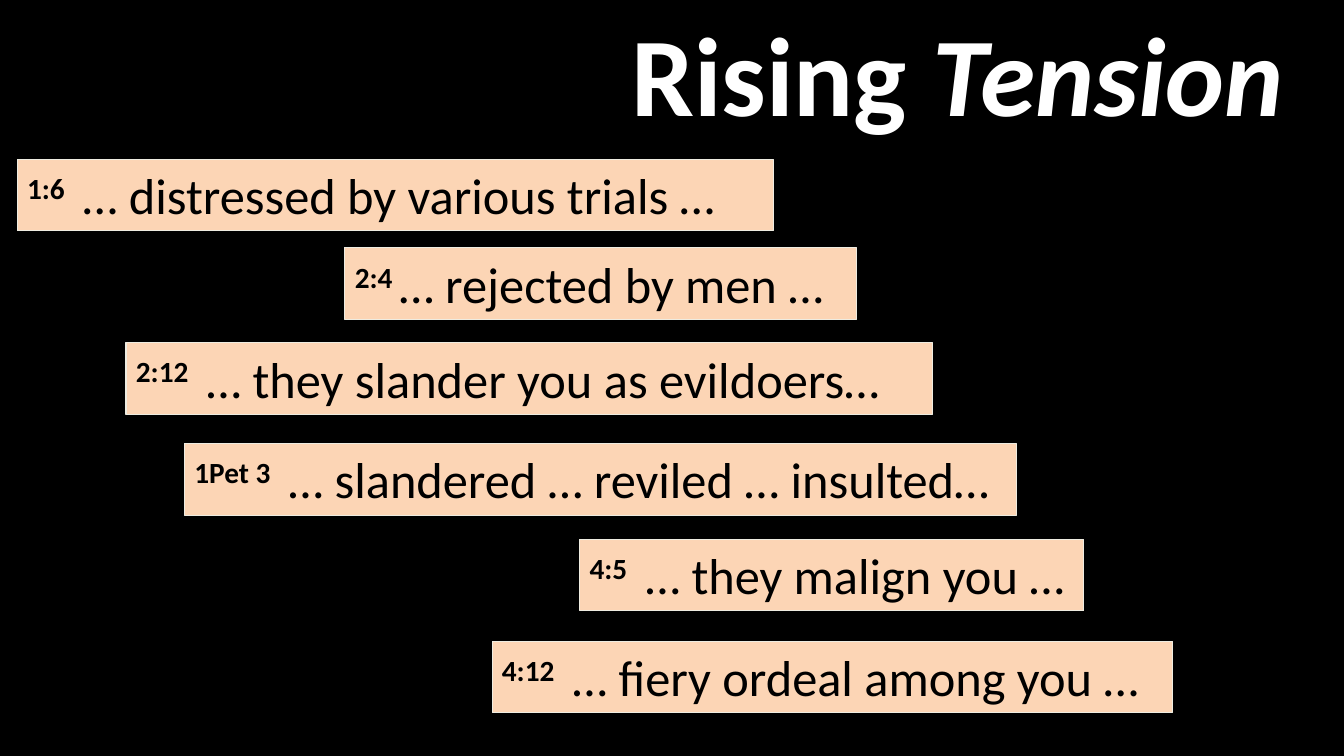
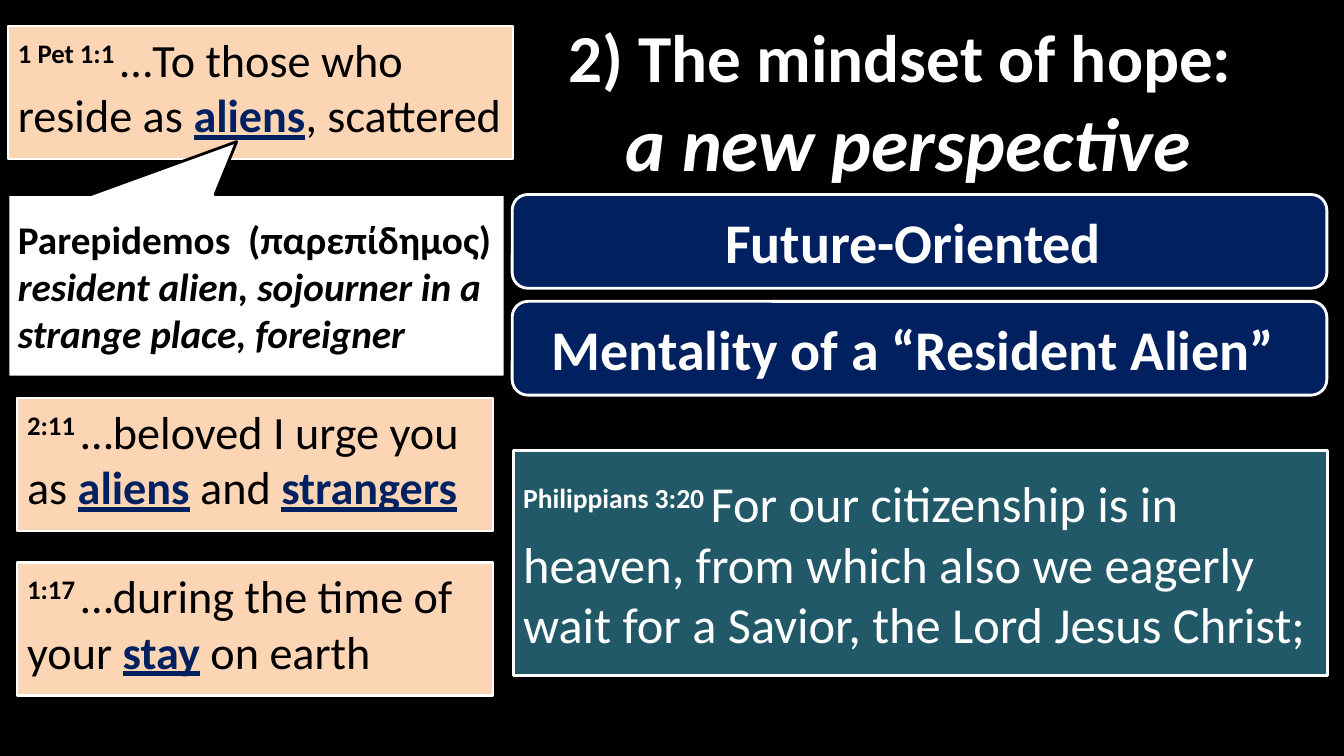
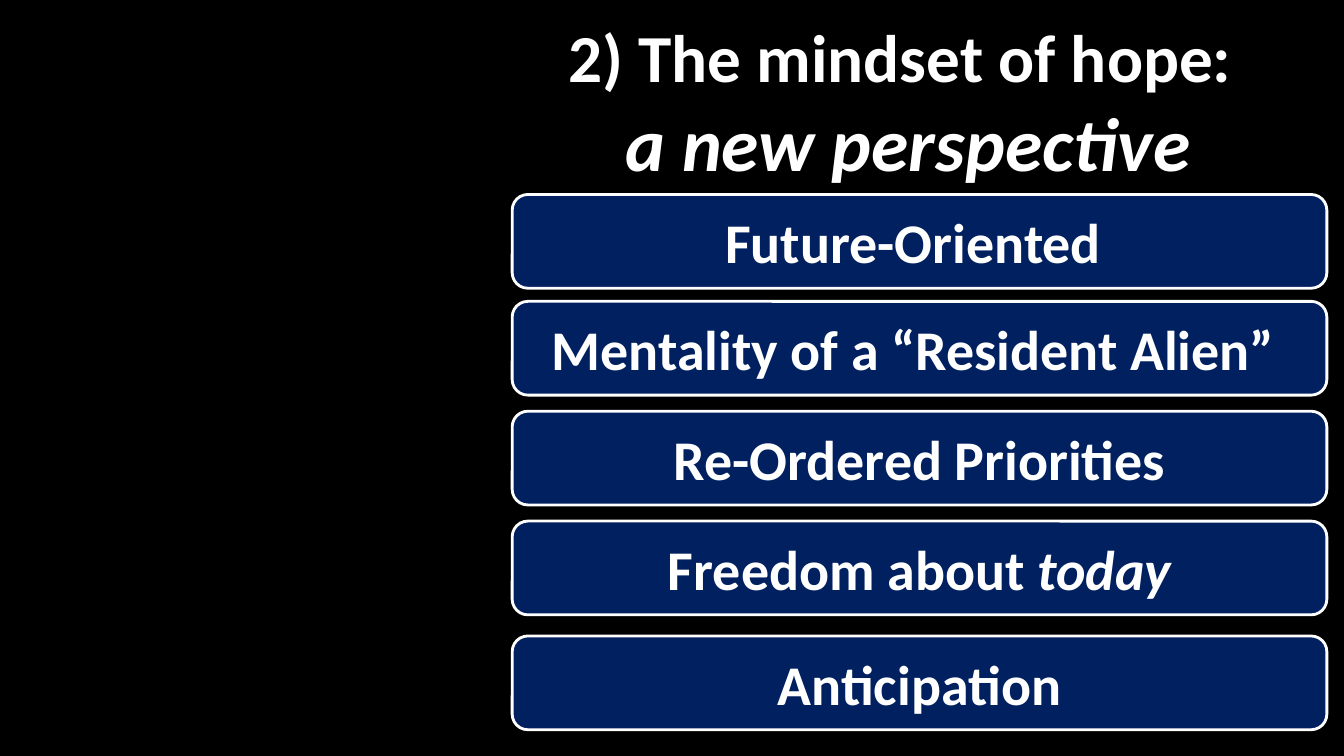
from dataclasses import dataclass

from pptx import Presentation
from pptx.dml.color import RGBColor
from pptx.enum.shapes import MSO_SHAPE as Preset
from pptx.enum.text import MSO_ANCHOR as Anchor, PP_ALIGN as Align
from pptx.util import Inches, Pt


@dataclass(frozen=True)
class Theme:
    font: str = "Calibri"
    black: str = "000000"
    white: str = "FFFFFF"
    peach: str = "FCD5B5"
    cream: str = "EEECE1"
    navy: str = "002060"
    teal: str = "215968"
    headline: int = 80
    subtitle: int = 54
    title: int = 48
    bar: int = 40
    quote: int = 36
    reference: int = 34
    verse: int = 33
    note: int = 28


theme = Theme()


def add_panel(slide, preset, box, paragraphs, color, fill=None, line=None,
              line_width=2, align=Align.LEFT, anchor=Anchor.MIDDLE):
    shape = slide.shapes.add_shape(preset, *[Inches(length) for length in box])
    shape.shadow.inherit = False
    if fill:
        shape.fill.solid()
        shape.fill.fore_color.rgb = RGBColor.from_string(fill)
    else:
        shape.fill.background()
    if line:
        shape.line.color.rgb = RGBColor.from_string(line)
        shape.line.width = Pt(line_width)
    else:
        shape.line.fill.background()
    text_frame = shape.text_frame
    text_frame.word_wrap = True
    text_frame.vertical_anchor = anchor
    for index, runs in enumerate(paragraphs):
        paragraph = text_frame.add_paragraph() if index else text_frame.paragraphs[0]
        paragraph.alignment = align
        for text, size, styles in runs:
            run = paragraph.add_run()
            run.text = text
            font = run.font
            font.name = theme.font
            font.size = Pt(size)
            font.bold = "bold" in styles
            font.italic = "italic" in styles
            font.underline = "underline" in styles
            font.color.rgb = RGBColor.from_string(theme.navy if font.underline else color)
            if "raised" in styles:
                run._r.get_or_add_rPr().set("baseline", "30000")
    return shape


def add_mindset(slide, bars):
    for top, runs in bars:
        add_panel(slide, Preset.ROUNDED_RECTANGLE, (5.08, top, 8.08, 0.93),
                  [[(text, theme.bar, styles) for text, styles in runs]],
                  theme.white, theme.navy, theme.white, align=Align.CENTER)
    add_panel(slide, Preset.ROUNDED_RECTANGLE, (4.92, 0.17, 8.17, 1.67),
              [[("2) The mindset of hope: ", theme.title, "bold")],
               [("a new perspective", theme.subtitle, "bold italic")]],
              theme.white, align=Align.CENTER)


presentation = Presentation()
presentation.slide_width = Inches(13.33)
presentation.slide_height = Inches(7.5)
slides = []
for number in range(3):
    slide = presentation.slides.add_slide(presentation.slide_layouts[6])
    slide.background.fill.solid()
    slide.background.fill.fore_color.rgb = RGBColor.from_string(theme.black)
    slides.append(slide)
tension_slide, alien_slide, summary_slide = slides

add_panel(tension_slide, Preset.ROUNDED_RECTANGLE, (5.25, 0, 8.5, 1.42),
          [[("Rising ", theme.headline, "bold"), ("Tension", theme.headline, "bold italic")]],
          theme.white, align=Align.CENTER)
trials = [
    (0.17, 1.58, 7.5, "1:6 ", " … distressed by various trials …"),
    (3.42, 2.46, 5.08, "2:4 ", "… rejected by men …"),
    (1.25, 3.4, 8, "2:12 ", " … they slander you as evildoers…"),
    (1.83, 4.4, 8.25, "1Pet 3 ", " … slandered … reviled … insulted…"),
    (5.75, 5.35, 5, "4:5 ", " … they malign you …"),
    (4.88, 6.36, 6.75, "4:12 ", " … fiery ordeal among you …"),
]
for left, top, width, reference, quote in trials:
    add_panel(tension_slide, Preset.RECTANGLE, (left, top, width, 0.71),
              [[(reference, theme.quote, "bold raised"), (quote, theme.quote, "")]],
              theme.black, theme.peach, theme.cream, 0.75, anchor=Anchor.TOP)

bars = [
    (1.93, [("Future-Oriented ", "bold")]),
    (2.99, [("Mentality of a “Resident Alien” ", "bold")]),
    (4.08, [("Re-Ordered Priorities", "bold")]),
    (5.17, [("Freedom about ", "bold"), ("today", "bold italic")]),
    (6.31, [("Anticipation", "bold")]),
]
add_mindset(alien_slide, bars[:2])
verses = [
    (0.08, 0.26, 5.01, [("1 Pet 1:1 ", "bold raised"), ("…To those who reside as ", ""),
                        ("aliens", "bold underline"), (", scattered", "")]),
    (0.17, 3.95, 4.72, [("2:11 ", "bold raised"), ("…beloved I urge you as ", ""),
                        ("aliens", "bold underline"), (" and ", ""),
                        ("strangers", "bold underline")]),
    (0.17, 5.58, 4.72, [("1:17 ", "bold raised"), ("…during the time of your ", ""),
                        ("stay", "bold underline"), (" on earth", "")]),
]
for left, top, width, runs in verses:
    add_panel(alien_slide, Preset.RECTANGLE, (left, top, width, 1.32),
              [[(text, theme.verse, styles) for text, styles in runs]],
              theme.black, theme.peach, theme.white, 1.5, anchor=Anchor.TOP)
callout = add_panel(
    alien_slide, Preset.RECTANGULAR_CALLOUT, (0.08, 1.93, 4.93, 1.81),
    [[("Parepidemos  (παρεπίδημος)", theme.note, "bold")],
     [("resident alien, sojourner in a strange place, foreigner", theme.note, "bold italic")]],
    theme.black, theme.white, theme.black)
callout.adjustments[0] = -0.04
callout.adjustments[1] = -0.79
add_panel(alien_slide, Preset.RECTANGLE, (5.09, 4.47, 8.08, 2.23),
          [[("Philippians 3:20 ", theme.reference, "bold raised"),
            ("For our citizenship is in heaven, from which also we eagerly wait "
             "for a Savior, the Lord Jesus Christ;", theme.quote, "")]],
          theme.white, theme.teal, theme.white)

add_mindset(summary_slide, bars)

presentation.save("out.pptx")
